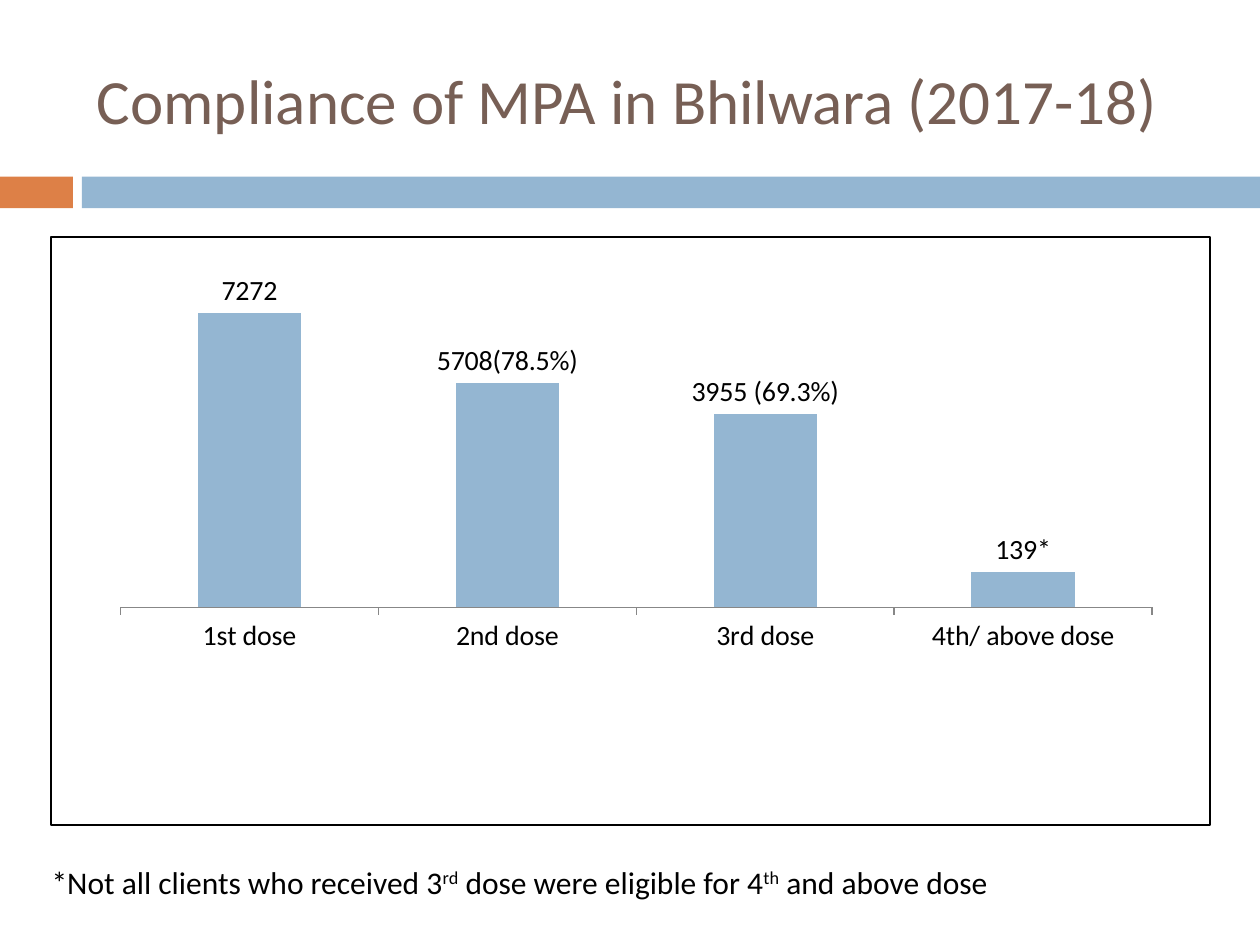
from lxml import etree
from pptx import Presentation
from pptx.chart.data import CategoryChartData
from pptx.dml.color import RGBColor
from pptx.enum.chart import XL_CHART_TYPE, XL_LABEL_POSITION, XL_TICK_MARK
from pptx.enum.shapes import MSO_SHAPE
from pptx.enum.text import MSO_ANCHOR, PP_ALIGN
from pptx.oxml import parse_xml
from pptx.oxml.ns import nsdecls, qn
from pptx.util import Cm, Pt

COLUMN = XL_CHART_TYPE.COLUMN_CLUSTERED
OUTSIDE_END = XL_LABEL_POSITION.OUTSIDE_END
TICK_OUT = XL_TICK_MARK.OUTSIDE
RECTANGLE = MSO_SHAPE.RECTANGLE
MIDDLE = MSO_ANCHOR.MIDDLE
LEFT = PP_ALIGN.LEFT

FONT = "Calibri"
COLORS = {
    "title": "775F55",
    "accent": "DD8047",
    "bar": "94B6D2",
    "text": "000000",
    "axis": "878787",
    "background": "FFFFFF",
}

TITLE = "Compliance of MPA in Bhilwara (2017-18)"
DOSES = [
    ("1st dose", 6899, "7272"),
    ("2nd dose", 5257, "5708(78.5%)"),
    ("3rd dose", 4540, "3955 (69.3%)"),
    ("4th/ above dose", 829, "139*"),
]
FOOTNOTE = [
    ("*Not all clients who received 3", False),
    ("rd", True),
    (" dose were eligible for 4", False),
    ("th", True),
    (" and above dose", False),
]
BANDS = [(0, 1.47, "accent"), (1.65, 23.75, "bar")]
PLOT_LAYOUT = {"x": 0.06, "y": 0.05, "w": 0.89, "h": 0.58}


def color(name):
    return RGBColor.from_string(COLORS[name])


def set_font(font, size, color_name="text"):
    font.name = FONT
    font.size = Pt(size)
    font.bold = False
    font.color.rgb = color(color_name)


def add_band(slide, left, width, color_name):
    band = slide.shapes.add_shape(RECTANGLE, Cm(left), Cm(3.56), Cm(width), Cm(0.64))
    band.shadow.inherit = False
    band.fill.solid()
    band.fill.fore_color.rgb = color(color_name)
    band.line.fill.background()


def add_title(slide):
    title = slide.shapes.title
    title.left, title.top, title.width, title.height = Cm(1.7), Cm(0.64), Cm(22.66), Cm(2.74)
    title.text_frame.text = TITLE
    title.text_frame.vertical_anchor = MIDDLE
    paragraph = title.text_frame.paragraphs[0]
    paragraph.alignment = LEFT
    set_font(paragraph.font, 36, "title")


def frame_chart(chart):
    properties = parse_xml(
        f'<c:spPr {nsdecls("c", "a")}>'
        f'<a:solidFill><a:srgbClr val="{COLORS["background"]}"/></a:solidFill>'
        f'<a:ln w="{Pt(1.5)}"><a:solidFill><a:srgbClr val="{COLORS["text"]}"/></a:solidFill></a:ln>'
        '</c:spPr>'
    )
    chart.element.find(qn("c:chart")).addnext(properties)


def place_plot(chart):
    plot_area = chart.element.find(qn("c:chart")).find(qn("c:plotArea"))
    for layout in plot_area.findall(qn("c:layout")):
        plot_area.remove(layout)
    layout = etree.Element(qn("c:layout"))
    manual = etree.SubElement(layout, qn("c:manualLayout"))
    settings = {"layoutTarget": "inner", "xMode": "edge", "yMode": "edge", **PLOT_LAYOUT}
    for tag, value in settings.items():
        etree.SubElement(manual, qn(f"c:{tag}")).set("val", str(value))
    plot_area.insert(0, layout)


def add_dose_chart(slide):
    data = CategoryChartData()
    data.categories = [dose for dose, _, _ in DOSES]
    data.add_series("Series 1", [value for _, value, _ in DOSES])
    chart = slide.shapes.add_chart(COLUMN, Cm(1), Cm(4.75), Cm(23.42), Cm(11.91), data).chart
    chart.has_legend = False
    chart.has_title = False
    set_font(chart.font, 10)

    value_axis = chart.value_axis
    value_axis.minimum_scale = 0
    value_axis.maximum_scale = 8000
    value_axis.has_major_gridlines = False
    value_axis.visible = False
    category_axis = chart.category_axis
    category_axis.major_tick_mark = TICK_OUT
    category_axis.format.line.color.rgb = color("axis")
    set_font(category_axis.tick_labels.font, 16)

    plot = chart.plots[0]
    plot.gap_width = 150
    plot.vary_by_categories = False
    series = plot.series[0]
    series.format.fill.solid()
    series.format.fill.fore_color.rgb = color("bar")
    labels = series.data_labels
    labels.show_value = True
    labels.position = OUTSIDE_END
    set_font(labels.font, 16)
    for index, (_, _, text) in enumerate(DOSES):
        label = series.points[index].data_label
        label.text_frame.text = text
        label.position = OUTSIDE_END
        set_font(label.text_frame.paragraphs[0].runs[0].font, 16)

    frame_chart(chart)
    place_plot(chart)


def add_footnote(slide):
    text_box = slide.shapes.add_textbox(Cm(0.79), Cm(17.27), Cm(23.22), Cm(1.03))
    text_box.text_frame.word_wrap = True
    paragraph = text_box.text_frame.paragraphs[0]
    set_font(paragraph.font, 18)
    for text, raised in FOOTNOTE:
        run = paragraph.add_run()
        run.text = text
        if raised:
            run.font._element.set("baseline", "30000")


def main():
    presentation = Presentation()
    presentation.slide_width, presentation.slide_height = Cm(25.4), Cm(19.05)
    slide = presentation.slides.add_slide(presentation.slide_layouts[5])
    for left, width, color_name in BANDS:
        add_band(slide, left, width, color_name)
    add_title(slide)
    add_dose_chart(slide)
    add_footnote(slide)
    presentation.save("out.pptx")


if __name__ == "__main__":
    main()
